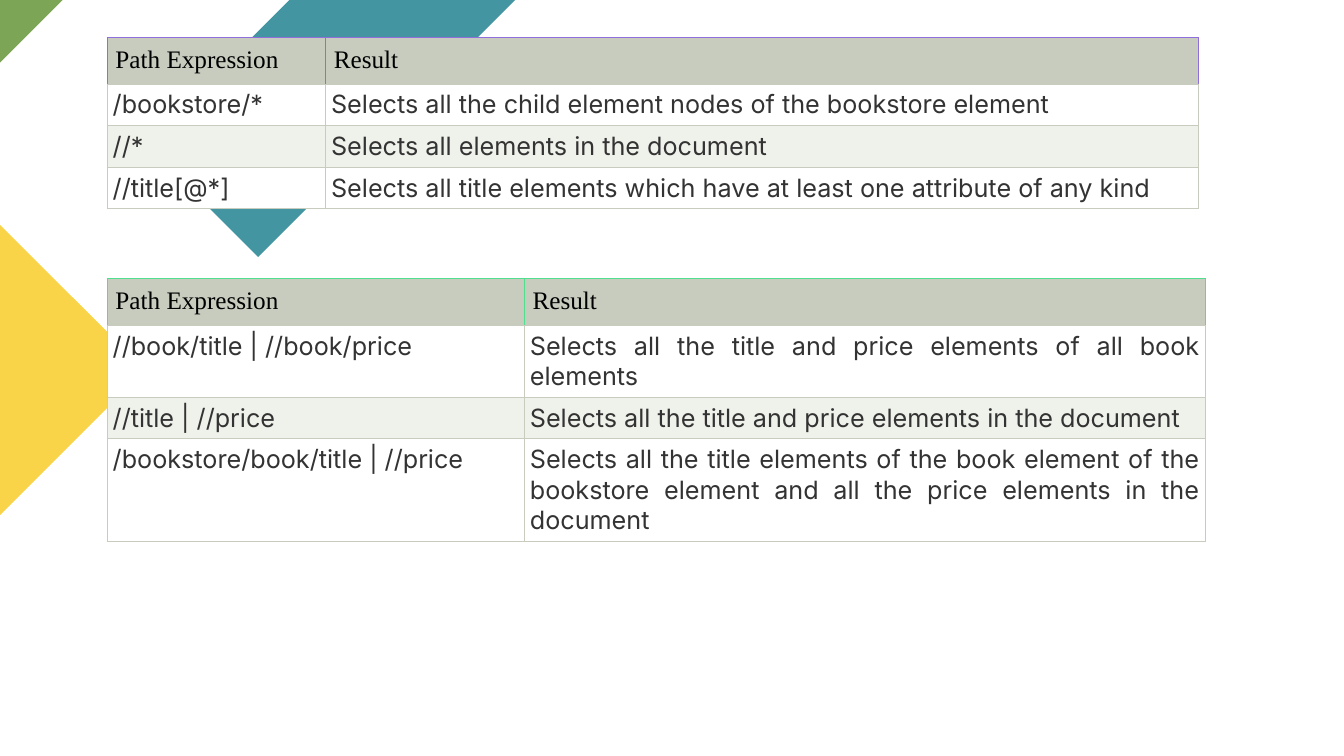
from lxml import etree
from pptx import Presentation
from pptx.dml.color import RGBColor
from pptx.enum import text
from pptx.oxml import ns
from pptx.util import Pt

HUES = {
    "teal": "4495A2", "green": "7CA655", "gold": "F9D448",
    "sage": "C7CCBE", "pale": "EFF1EB", "white": "FFFFFF",
    "purple": "906FDC", "mint": "50DF8F", "black": "000000", "ink": "333333",
}
SIZE = 18
HEAD_H = 33.2
ROW_H, LINE_H = 29.6, 21.7

# Corner points of the background shapes, in points
DECOR = [
    ("teal", [(426.24, -58.32), (264.96, -58.32), (103.68, 102.96), (184.32, 183.6)]),
    ("green", [(102.96, -58.32), (-54, -58.32), (-54, 98.64)]),
    ("gold", [(-54, 421.92), (103.68, 264.24), (-54, 106.56)]),
]

HEADS = ("Path Expression", "Result")

# Each row: expression, result, number of text lines
WILD = [
    ("/bookstore/*", "Selects all the child element nodes of the bookstore element", 1),
    ("//*", "Selects all elements in the document", 1),
    ("//title[@*]", "Selects all title elements which have at least one attribute of any kind", 1),
]
UNION = [
    ("//book/title | //book/price",
     "Selects all the title and price elements of all book elements", 2),
    ("//title | //price", "Selects all the title and price elements in the document", 1),
    ("/bookstore/book/title | //price",
     "Selects all the title elements of the book element of the bookstore element "
     "and all the price elements in the document", 3),
]


def color(name):
    return RGBColor.from_string(HUES[name])


def add_decor(slide):
    for hue, pts in DECOR:
        pts = [(Pt(x), Pt(y)) for x, y in pts]
        form = slide.shapes.build_freeform(*pts[0])
        form.add_line_segments(pts[1:], close=True)
        shape = form.convert_to_shape()
        shape.shadow.inherit = False
        shape.fill.solid()
        shape.fill.fore_color.rgb = color(hue)
        shape.line.fill.background()


def set_edges(cell, edge):
    """Draw half-point borders; the bottom one is always sage."""
    props = cell._tc.get_or_add_tcPr()
    for side, hue in zip("LRTB", (edge, edge, edge, "sage")):
        line = etree.SubElement(props, ns.qn("a:ln" + side), w=str(Pt(0.5)))
        fill = etree.SubElement(line, ns.qn("a:solidFill"))
        etree.SubElement(fill, ns.qn("a:srgbClr"), val=HUES[hue])


def fill_cell(cell, words, back, edge, pad, font, ink, align):
    set_edges(cell, edge)
    cell.fill.solid()
    cell.fill.fore_color.rgb = color(back)
    cell.margin_left = cell.margin_right = Pt(pad)
    cell.margin_top = cell.margin_bottom = Pt(pad)
    cell.text_frame.text = words
    para = cell.text_frame.paragraphs[0]
    para.alignment = align
    face = para.runs[0].font
    face.name, face.size = font, Pt(SIZE)
    face.color.rgb = color(ink)


def add_grid(slide, left, top, widths, rows, edge):
    """Place a table with a header row and striped body rows."""
    highs = [HEAD_H] + [ROW_H + LINE_H * (row[2] - 1) for row in rows]
    frame = slide.shapes.add_table(
        len(highs), len(widths), Pt(left), Pt(top), Pt(sum(widths)), Pt(sum(highs)))
    table = frame.table
    table.first_row = table.horz_banding = False
    for col, width in zip(table.columns, widths):
        col.width = Pt(width)
    for row, high in zip(table.rows, highs):
        row.height = Pt(high)
    for c, words in enumerate(HEADS):
        fill_cell(table.cell(0, c), words, "sage", edge, 6,
                  "Times New Roman", "black", text.PP_ALIGN.LEFT)
    for r, row in enumerate(rows, 1):
        back = "white" if r % 2 else "pale"
        for c, words in enumerate(row[:2]):
            fill_cell(table.cell(r, c), words, back, "sage", 4,
                      "Inter", "ink", text.PP_ALIGN.JUSTIFY)


def main():
    deck = Presentation()
    deck.slide_width, deck.slide_height = Pt(960), Pt(540)
    slide = deck.slides.add_slide(deck.slide_layouts[6])
    add_decor(slide)
    add_grid(slide, 76.5, 26.7, (156, 623.5), WILD, "purple")
    add_grid(slide, 76.5, 199, (298, 486.5), UNION, "mint")
    deck.save("out.pptx")


if __name__ == "__main__":
    main()
